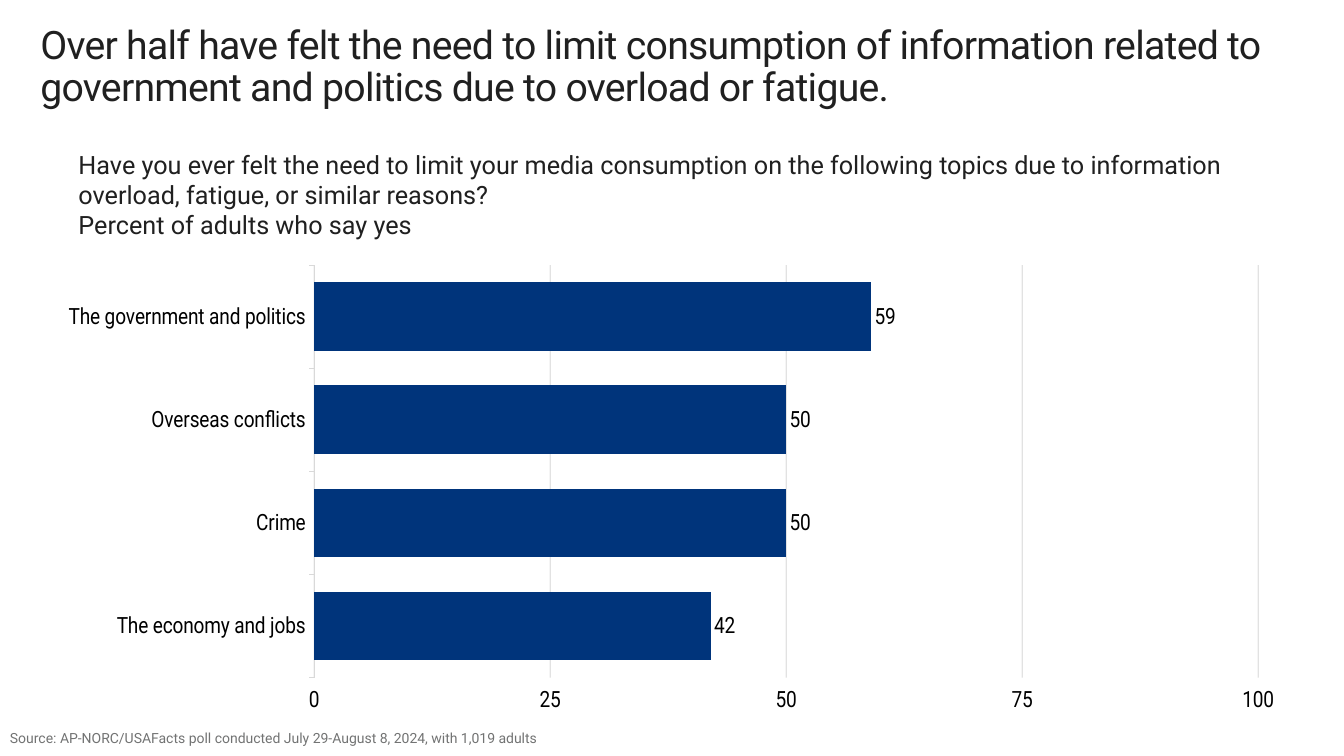
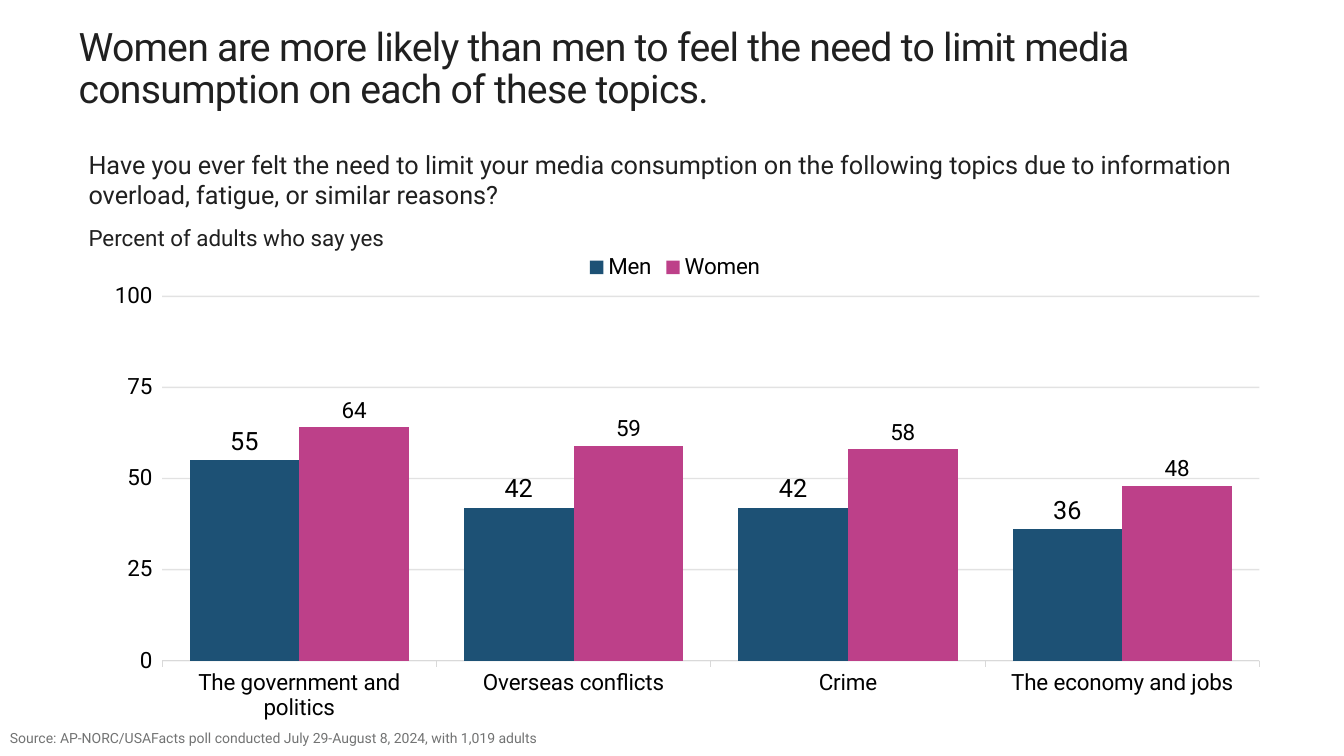
import dataclasses

import lxml.etree
import pptx
import pptx.chart.data
import pptx.dml.color
import pptx.enum.chart
import pptx.enum.text
import pptx.oxml
import pptx.oxml.ns
import pptx.util

CHART = pptx.enum.chart
TOP = pptx.enum.text.MSO_ANCHOR.TOP
MIDDLE = pptx.enum.text.MSO_ANCHOR.MIDDLE


@dataclasses.dataclass(frozen=True)
class Theme:
    font: str = "Roboto"
    ink: str = "202020"
    muted: str = "727373"
    chart_text: str = "000000"
    axis: str = "D9D9D9"
    grid: str = "C7C7C7"
    adults: str = "00347B"
    men: str = "1D5175"
    women: str = "BD4089"
    title_size: int = 28
    question_size: int = 18
    chart_size: int = 16
    source_size: int = 10
    grid_alpha: int = 50
    title_tracking: float = -0.5


def rgb(value):
    return pptx.dml.color.RGBColor.from_string(value)


def set_attributes(target, values):
    for name, value in values.items():
        setattr(target, name, value)


class Deck:
    COLUMNS = 100
    ROWS = 75

    def __init__(self, theme):
        self.theme = theme
        self.presentation = pptx.Presentation()
        set_attributes(self.presentation, {
            "slide_width": pptx.util.Inches(13.33),
            "slide_height": pptx.util.Inches(7.5),
        })
        self.slide = None

    def new_slide(self):
        self.slide = self.presentation.slides.add_slide(self.presentation.slide_layouts[6])

    def place(self, left, top, width, height):
        column = self.presentation.slide_width / self.COLUMNS
        row = self.presentation.slide_height / self.ROWS
        return [round(length) for length in (left * column, top * row, width * column, height * row)]

    def style_font(self, font, size, color):
        set_attributes(font, {"name": self.theme.font, "size": pptx.util.Pt(size)})
        font.color.rgb = rgb(color)

    def text(self, area, lines, color, inset=0.1, spacing=1.0, gap=0, anchor=TOP, tracking=0):
        frame = self.slide.shapes.add_textbox(*self.place(*area)).text_frame
        set_attributes(frame, {
            "word_wrap": True,
            "vertical_anchor": anchor,
            "margin_left": pptx.util.Inches(inset),
            "margin_top": 0,
            "margin_right": 0,
            "margin_bottom": 0,
        })
        for index, (words, size) in enumerate(lines):
            paragraph = frame.add_paragraph() if index else frame.paragraphs[0]
            set_attributes(paragraph, {
                "line_spacing": spacing,
                "space_before": pptx.util.Pt(gap if index else 0),
            })
            run = paragraph.add_run()
            run.text = words
            self.style_font(run.font, size, color)
            if tracking:
                run._r.get_or_add_rPr().set("spc", str(round(tracking * 100)))

    def title(self, area, words):
        self.text(area, [(words, self.theme.title_size)], self.theme.ink, inset=0,
                  spacing=0.9, tracking=self.theme.title_tracking)

    def question(self, area, note_size, gap=0):
        lines = [(QUESTION, self.theme.question_size), (NOTE, note_size)]
        self.text(area, lines, self.theme.ink, gap=gap)

    def source(self):
        self.text((0, 72.3, 56.25, 2), [(SOURCE, self.theme.source_size)], self.theme.muted,
                  spacing=0.95, anchor=MIDDLE)

    def chart(self, area, kind, categories, series, plot_area, legend=False):
        data = pptx.chart.data.CategoryChartData()
        data.categories = categories
        for name, values, color, size in series:
            data.add_series(name, values)
        chart = self.slide.shapes.add_chart(kind, *self.place(*area), data).chart
        set_attributes(chart, {"has_title": False, "has_legend": legend})
        self.style_font(chart.font, self.theme.chart_size, self.theme.chart_text)
        if legend:
            set_attributes(chart.legend, {
                "position": CHART.XL_LEGEND_POSITION.TOP,
                "include_in_layout": False,
            })
            self.style_font(chart.legend.font, self.theme.chart_size, self.theme.chart_text)
        plot = chart.plots[0]
        set_attributes(plot, {"gap_width": 50, "overlap": 0, "vary_by_categories": False})
        for bars, (name, values, color, size) in zip(plot.series, series):
            bars.format.fill.solid()
            bars.format.fill.fore_color.rgb = rgb(color)
            bars.invert_if_negative = False
            set_attributes(bars.data_labels, {
                "show_value": True,
                "position": CHART.XL_LABEL_POSITION.OUTSIDE_END,
            })
            self.style_font(bars.data_labels.font, size, self.theme.chart_text)
        self.style_axes(chart)
        self.fix_plot_area(chart, plot_area)

    def style_axes(self, chart):
        no_tick = CHART.XL_TICK_MARK.NONE
        category_axis, value_axis = chart.category_axis, chart.value_axis
        set_attributes(category_axis, {
            "major_tick_mark": CHART.XL_TICK_MARK.OUTSIDE,
            "minor_tick_mark": no_tick,
            "has_major_gridlines": False,
        })
        set_attributes(value_axis, {
            "major_tick_mark": no_tick,
            "minor_tick_mark": no_tick,
            "tick_label_position": CHART.XL_TICK_LABEL_POSITION.LOW,
            "minimum_scale": 0,
            "maximum_scale": 100,
            "major_unit": 25,
            "has_major_gridlines": True,
        })
        for axis in (category_axis, value_axis):
            self.style_font(axis.tick_labels.font, self.theme.chart_size, self.theme.chart_text)
        value_axis.format.line.fill.background()
        for line, color, width in ((category_axis.format.line, self.theme.axis, 0.75),
                                   (value_axis.major_gridlines.format.line, self.theme.grid, 1)):
            line.color.rgb = rgb(color)
            line.width = pptx.util.Pt(width)
        grid_color = value_axis._element.xpath("c:majorGridlines//a:srgbClr")[0]
        alpha = lxml.etree.SubElement(grid_color, pptx.oxml.ns.qn("a:alpha"))
        alpha.set("val", str(self.theme.grid_alpha * 1000))

    def fix_plot_area(self, chart, shares):
        element = chart._chartSpace.chart.plotArea
        for layout in element.findall(pptx.oxml.ns.qn("c:layout")):
            element.remove(layout)
        values = [("layoutTarget", "inner"), ("xMode", "edge"), ("yMode", "edge")]
        values += zip("xywh", shares)
        entries = "".join(f'<c:{tag} val="{value}"/>' for tag, value in values)
        element.insert(0, pptx.oxml.parse_xml(
            f'<c:layout {pptx.oxml.ns.nsdecls("c")}>'
            f"<c:manualLayout>{entries}</c:manualLayout></c:layout>"))


QUESTION = ("Have you ever felt the need to limit your media consumption on the following topics "
            "due to information overload, fatigue, or similar reasons?")
NOTE = "Percent of adults who say yes"
SOURCE = "Source: AP-NORC/USAFacts poll conducted July 29-August 8, 2024, with 1,019 adults"
TOPICS = ["The government and politics", "Overseas conflicts", "Crime", "The economy and jobs"]


def add_overall_slide(deck):
    theme = deck.theme
    deck.new_slide()
    deck.title((3, 2.5, 94, 9.8), "Over half have felt the need to limit consumption of information "
               "related to government and politics due to overload or fatigue.")
    deck.chart((5.1, 24.4, 89.7, 47.6), CHART.XL_CHART_TYPE.BAR_CLUSTERED, TOPICS[::-1],
               [("Series 1", (42, 50, 50, 59), theme.adults, theme.chart_size)],
               (0.24, 0.04, 0.92, 0.86))
    deck.source()
    deck.question((5.1, 14.8, 88.2, 14.6), theme.question_size)


def add_gender_slide(deck):
    theme = deck.theme
    deck.new_slide()
    deck.title((5.85, 2.7, 88.35, 10.8), "Women are more likely than men to feel the need to limit "
               "media consumption on each of these topics.")
    deck.chart((5.85, 24.1, 88.75, 48.2), CHART.XL_CHART_TYPE.COLUMN_CLUSTERED, TOPICS,
               [("Men", (55, 42, 42, 36), theme.men, theme.question_size),
                ("Women", (64, 59, 58, 48), theme.women, theme.chart_size)],
               (0.07, 0.11, 0.92, 0.75), legend=True)
    deck.source()
    deck.question((5.85, 14.8, 88.35, 14.6), theme.chart_size, gap=10)


def main():
    deck = Deck(Theme())
    add_overall_slide(deck)
    add_gender_slide(deck)
    deck.presentation.save("out.pptx")


if __name__ == "__main__":
    main()
